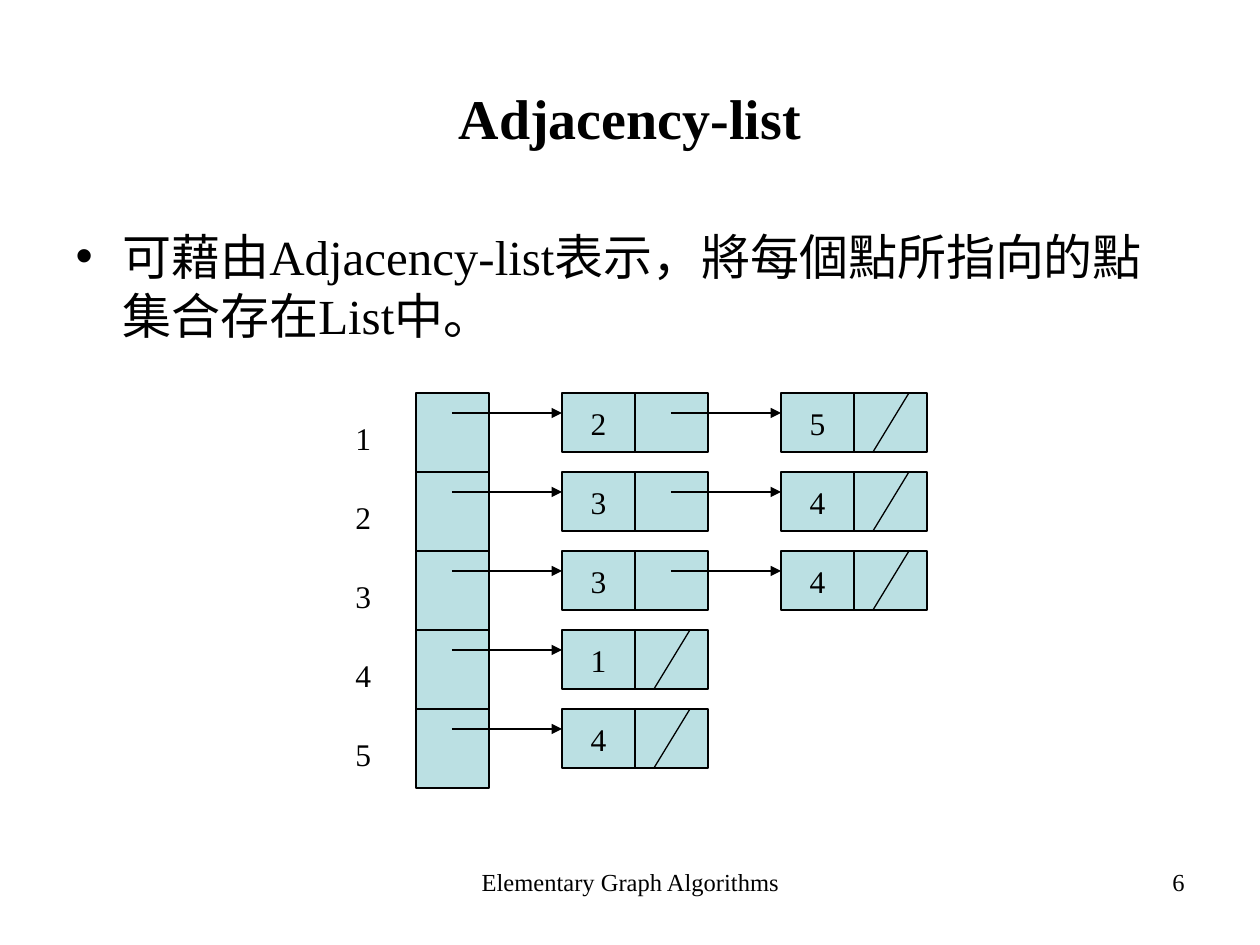
from lxml import etree
from pptx import Presentation
from pptx.dml.color import RGBColor
from pptx.enum import shapes, text
from pptx.oxml import ns
from pptx import util as u

PX = 914400 // 126
FONT = "Times New Roman"
BLACK, BLUE = "000000", "BBE0E3"
LEFT, TOP, CELL, STEP, NODE = 416, 393, 73, 79, 59
LISTS = [["2", "5"], ["3", "4"], ["3", "4"], ["1"], ["4"]]


def px(*vals):
    return [u.Emu(v * PX) for v in vals]


def tint(code):
    return RGBColor.from_string(code)


class Deck:
    """Hold the style and the current slide, and draw each kind of element."""

    def __init__(self):
        self.prs = Presentation()
        self.prs.slide_width, self.prs.slide_height = px(1260, 945)
        self.slide = self.prs.slides.add_slide(self.prs.slide_layouts[1])

    def put(self, frame, words, size, align=text.PP_ALIGN.LEFT, bold=False):
        para = frame.paragraphs[0]
        para.alignment = align
        run = para.add_run()
        run.text = words
        font = run.font
        font.name, font.size, font.bold = FONT, u.Pt(size), bold
        font.color.rgb = tint(BLACK)
        return para

    def place(self, shape, box):
        shape.left, shape.top, shape.width, shape.height = px(*box)
        frame = shape.text_frame
        frame.word_wrap = True
        frame.auto_size = text.MSO_AUTO_SIZE.NONE
        return frame

    def title(self, words, box):
        frame = self.place(self.slide.shapes.title, box)
        frame.vertical_anchor = text.MSO_ANCHOR.MIDDLE
        self.put(frame, words, 32, text.PP_ALIGN.CENTER, True)

    def body(self, words, box, dent):
        frame = self.place(self.slide.placeholders[1], box)
        props = self.put(frame, words, 28)._p.get_or_add_pPr()
        props.set("marL", str(dent * PX))
        props.set("indent", str(-dent * PX))
        mark = etree.SubElement(props, ns.qn("a:buChar"))
        mark.set("char", "•")

    def label(self, words, box, size, align=text.PP_ALIGN.LEFT):
        shape = self.slide.shapes.add_textbox(*px(*box))
        frame = shape.text_frame
        frame.word_wrap = True
        self.put(frame, words, size, align)

    def cell(self, x, y, high, words=""):
        kind = shapes.MSO_SHAPE.RECTANGLE
        shape = self.slide.shapes.add_shape(kind, *px(x, y, CELL, high))
        shape.shadow.inherit = False
        shape.fill.solid()
        shape.fill.fore_color.rgb = tint(BLUE)
        shape.line.color.rgb = tint(BLACK)
        shape.line.width = u.Pt(0.75)
        if words:
            frame = shape.text_frame
            frame.word_wrap = False
            frame.vertical_anchor = text.MSO_ANCHOR.MIDDLE
            self.put(frame, words, 18, text.PP_ALIGN.CENTER)

    def line(self, x1, y1, x2, y2, arrow=False):
        kind = shapes.MSO_CONNECTOR.STRAIGHT
        link = self.slide.shapes.add_connector(kind, *px(x1, y1, x2, y2))
        link.line.color.rgb = tint(BLACK)
        link.line.width = u.Pt(0.75)
        props = link._element.spPr
        if arrow:
            tail = etree.SubElement(props.find(ns.qn("a:ln")), ns.qn("a:tailEnd"))
            tail.set("type", "triangle")
        etree.SubElement(props, ns.qn("a:effectLst"))

    def chain(self, row, items):
        y = TOP + row * STEP
        self.cell(LEFT, y, STEP)
        self.label(str(row + 1), (343, y + 20, 92, 50), 18)
        for col, item in enumerate(items):
            x = LEFT + CELL * (2 + 3 * col)
            self.cell(x, y, NODE, item)
            self.cell(x + CELL, y, NODE)
            self.line(x - 110, y + 20, x, y + 20, arrow=True)
        self.line(x + 128, y, x + 92, y + NODE)


def main():
    deck = Deck()
    deck.title("Adjacency-list", (63, 38, 1134, 158))
    deck.body("可藉由Adjacency-list表示，將每個點所指向的點集合存在List中。",
              (63, 220, 1134, 624), 47)
    for row, items in enumerate(LISTS):
        deck.chain(row, items)
    deck.label("Elementary Graph Algorithms", (431, 861, 399, 66), 14,
               text.PP_ALIGN.CENTER)
    deck.label("6", (903, 861, 294, 66), 14, text.PP_ALIGN.RIGHT)
    deck.prs.save("out.pptx")


if __name__ == "__main__":
    main()
